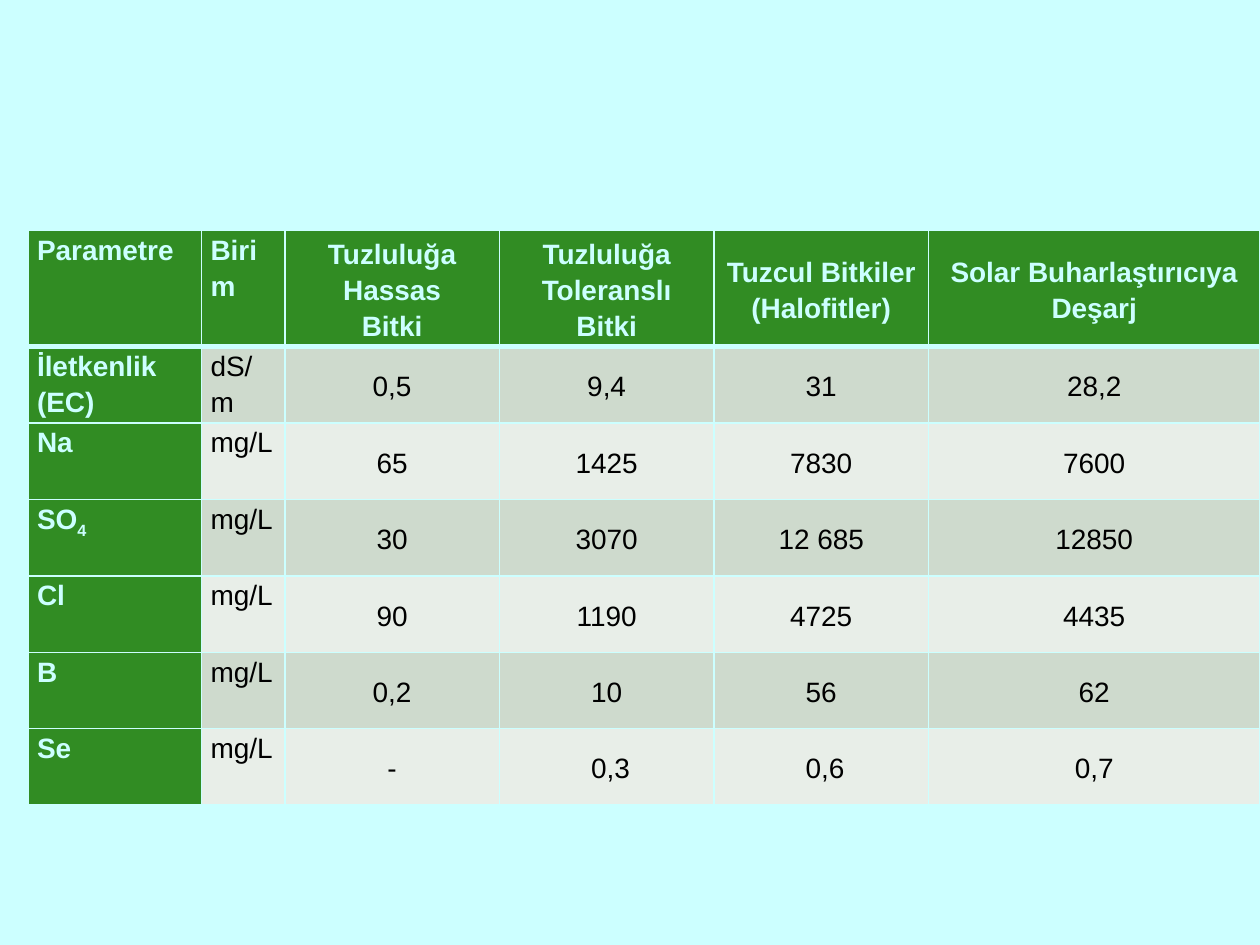
from dataclasses import dataclass

from lxml import etree
from pptx import Presentation
from pptx.dml.color import RGBColor
from pptx.enum import text
from pptx.oxml import ns
from pptx.util import Pt

ICE = RGBColor(0xCC, 0xFF, 0xFF)
GREEN = RGBColor(0x31, 0x8C, 0x23)
BAND_DARK = RGBColor(0xCE, 0xDA, 0xCD)
BAND_LIGHT = RGBColor(0xE8, 0xEE, 0xE8)
BLACK = RGBColor(0, 0, 0)

LEFT, TOP = 16, 131.8
COL_WIDTHS = [99.2, 47.6, 122.6, 122.6, 122.6, 189.4]
HEADER_HEIGHT, ROW_HEIGHT = 66.2, 43.7
THIN, THICK = 1, 3

HEADINGS = [
    "Parametre",
    "Birim",
    "Tuzluluğa Hassas\nBitki",
    "Tuzluluğa Toleranslı Bitki",
    "Tuzcul Bitkiler (Halofitler)",
    "Solar Buharlaştırıcıya Deşarj",
]


@dataclass
class Parameter:
    name: str
    unit: str
    values: list[str]
    subscript: str = ""


PARAMETERS = [
    Parameter("İletkenlik (EC)", "dS/m", ["0,5", "9,4", "31", "28,2"]),
    Parameter("Na", "mg/L", ["65", "1425", "7830", "7600"]),
    Parameter("SO", "mg/L", ["30", "3070", "12 685", "12850"], "4"),
    Parameter("Cl", "mg/L", ["90", "1190", "4725", "4435"]),
    Parameter("B", "mg/L", ["0,2", "10", "56", "62"]),
    Parameter("Se", "mg/L", ["-", " 0,3", " 0,6", "0,7"]),
]


def add_run(p, content: str, color: RGBColor, bold: bool, baseline: int = 0) -> None:
    r = p.add_run()
    r.text = content
    r.font.name = "Arial"
    r.font.size = Pt(16)
    r.font.bold = bold
    r.font.color.rgb = color
    if baseline:
        r._r.get_or_add_rPr().set("baseline", str(baseline))


def set_borders(cell, top: float, bottom: float) -> None:
    tc_pr = cell._tc.get_or_add_tcPr()
    widths = {"lnL": THIN, "lnR": THIN, "lnT": top, "lnB": bottom}
    for i, (tag, width) in enumerate(widths.items()):
        ln = etree.Element(ns.qn(f"a:{tag}"), w=str(Pt(width)))
        fill = etree.SubElement(ln, ns.qn("a:solidFill"))
        etree.SubElement(fill, ns.qn("a:srgbClr"), val=str(ICE))
        tc_pr.insert(i, ln)


def fill_cell(table, row: int, col: int, content: str, subscript: str = "") -> None:
    cell = table.cell(row, col)
    header = row == 0
    label = header or col == 0
    centered = col >= 2
    cell.margin_left = cell.margin_right = Pt(5.2)
    cell.margin_top = cell.margin_bottom = 0
    cell.vertical_anchor = text.MSO_ANCHOR.MIDDLE if centered else text.MSO_ANCHOR.TOP
    cell.fill.solid()
    cell.fill.fore_color.rgb = GREEN if label else BAND_DARK if row % 2 else BAND_LIGHT
    set_borders(cell, THICK if row == 1 else THIN, THICK if header else THIN)

    tf = cell.text_frame
    color = ICE if label else BLACK
    for i, line in enumerate(content.split("\n")):
        p = tf.add_paragraph() if i else tf.paragraphs[0]
        p.alignment = text.PP_ALIGN.CENTER if centered else text.PP_ALIGN.JUSTIFY
        p.line_spacing = 1.15
        add_run(p, line, color, label)
    if subscript:
        add_run(p, subscript, color, label, -25000)


def main() -> None:
    prs = Presentation()
    prs.slide_width, prs.slide_height = Pt(720), Pt(540)
    s = prs.slides.add_slide(prs.slide_layouts[6])
    s.background.fill.solid()
    s.background.fill.fore_color.rgb = ICE

    heights = [HEADER_HEIGHT] + [ROW_HEIGHT] * len(PARAMETERS)
    frame = s.shapes.add_table(
        len(heights), len(COL_WIDTHS),
        Pt(LEFT), Pt(TOP), Pt(sum(COL_WIDTHS)), Pt(sum(heights)),
    )
    table = frame.table
    for column, width in zip(table.columns, COL_WIDTHS):
        column.width = Pt(width)
    for row, height in zip(table.rows, heights):
        row.height = Pt(height)

    for col, heading in enumerate(HEADINGS):
        fill_cell(table, 0, col, heading)
    for row, parameter in enumerate(PARAMETERS, start=1):
        fill_cell(table, row, 0, parameter.name, parameter.subscript)
        for col, content in enumerate([parameter.unit, *parameter.values], start=1):
            fill_cell(table, row, col, content)

    prs.save("out.pptx")


if __name__ == "__main__":
    main()
